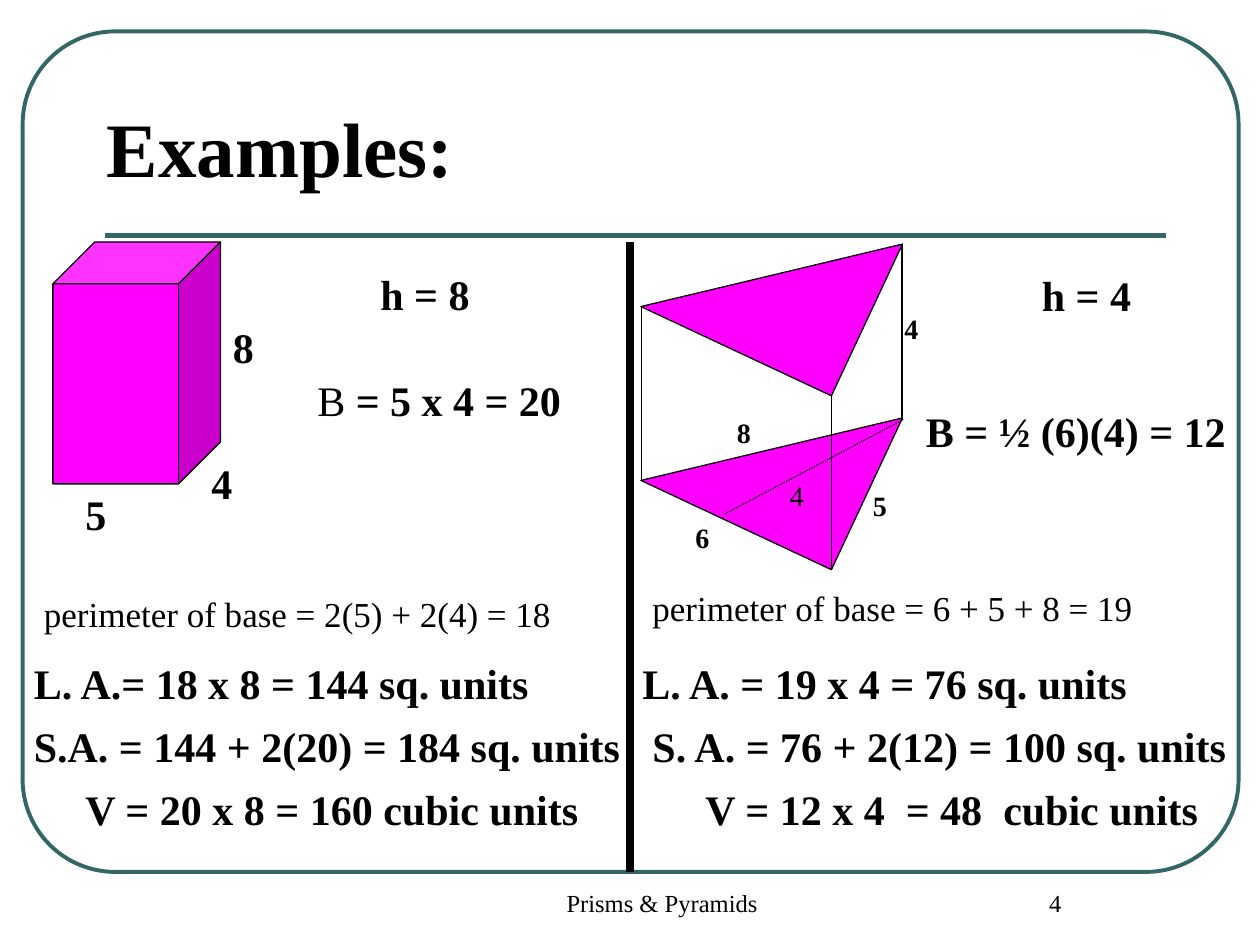
from lxml import etree
from pptx import Presentation
from pptx.dml.color import RGBColor
from pptx.enum.dml import MSO_LINE
from pptx.enum.shapes import MSO_CONNECTOR, MSO_SHAPE as SHAPE
from pptx.enum.text import MSO_ANCHOR as ANCHOR, PP_ALIGN as ALIGN
from pptx.oxml.ns import qn
from pptx.util import Inches, Pt

BLACK = RGBColor(0x00, 0x00, 0x00)
TEAL = RGBColor(0x33, 0x66, 0x66)
MAGENTA = RGBColor(0xFF, 0x00, 0xFF)
FONT = "Times New Roman"

prs = Presentation()
prs.slide_width, prs.slide_height = Inches(10), Inches(7.5)
slide = prs.slides.add_slide(prs.slide_layouts[6])
shapes = slide.shapes


def add_text(text, left, top, width, height=0.5, size=24, bold=True,
             align=ALIGN.LEFT, anchor=ANCHOR.TOP, spacing=1.0, plain_start=""):
    """Place one line of text; plain_start is a lead-in that is never bold."""
    frame = shapes.add_textbox(Inches(left), Inches(top),
                               Inches(width), Inches(height)).text_frame
    frame.word_wrap = True
    frame.vertical_anchor = anchor
    paragraph = frame.paragraphs[0]
    paragraph.alignment = align
    paragraph.line_spacing = spacing
    for words, is_bold in ((plain_start, False), (text, bold)):
        if words:
            run = paragraph.add_run()
            run.text = words
            run.font.name, run.font.size, run.font.bold = FONT, Pt(size), is_bold
            run.font.color.rgb = BLACK


def add_line(start, end, color=BLACK, width=0.75, dash=None):
    line = shapes.add_connector(MSO_CONNECTOR.STRAIGHT,
                                *(Inches(v) for v in (*start, *end)))
    line.line.color.rgb = color
    line.line.width = Pt(width)
    if dash:
        line.line.dash_style = dash
    etree.SubElement(line._element.spPr, qn("a:effectLst"))


# Frame, title and footer
frame_outline = shapes.add_shape(SHAPE.ROUNDED_RECTANGLE, Inches(0.18), Inches(0.25),
                                 Inches(9.65), Inches(6.67))
frame_outline.adjustments[0] = 0.11
frame_outline.shadow.inherit = False
frame_outline.fill.background()
frame_outline.line.color.rgb = TEAL
frame_outline.line.width = Pt(2.25)
add_line((0.83, 1.87), (9.25, 1.87), TEAL, 3)
add_text("Prisms & Pyramids", 3.67, 7, 3.17, size=14, bold=False, align=ALIGN.CENTER)
add_text("4", 7.5, 7, 1.75, size=14, bold=False, align=ALIGN.CENTER)
add_text("Examples:", 0.75, 0.33, 8.42, 1.25, size=44, anchor=ANCHOR.BOTTOM)
add_line((5, 1.92), (5, 6.92), width=4.5)

# Solids: the box, then the two bases of the triangular prism
for kind, left, top, width, height, turn in (
    (SHAPE.CUBE, 0.42, 1.92, 1.33, 1.92, 0),
    (SHAPE.RIGHT_TRIANGLE, 5.46, 2.73, 1.33, 1.67, 295.1),
    (SHAPE.RIGHT_TRIANGLE, 5.46, 1.35, 1.33, 1.67, 295.1),
):
    solid = shapes.add_shape(kind, Inches(left), Inches(top),
                             Inches(width), Inches(height))
    solid.rotation = turn
    solid.shadow.inherit = False
    solid.fill.solid()
    solid.fill.fore_color.rgb = MAGENTA
    solid.line.color.rgb = BLACK
    solid.line.width = Pt(0.75)

# Upright edges of the prism and the dotted height of its base
PRISM_HEIGHT = 1.38
for x, y in ((5.09, 2.44), (6.6, 3.14), (7.16, 1.94)):
    add_line((x, y), (x, y + PRISM_HEIGHT))
add_line((5.75, 4.08), (7.17, 3.33), dash=MSO_LINE.ROUND_DOT)

# Edge lengths
for label, left, top, width in (
    ("5", 0.58, 3.83, 0.67), ("4", 1.58, 3.58, 0.33), ("8", 1.75, 2.5, 0.33),
):
    add_text(label, left, top, width)
for label, left, top, width, bold in (
    ("6", 5.42, 4.08, 0.5, True), ("8", 5.75, 3.25, 0.42, True),
    ("5", 6.83, 3.83, 0.42, True), ("4", 7.08, 2.42, 0.42, True),
    ("4", 6.17, 3.75, 0.33, False),
):
    add_text(label, left, top, width, 0.37, size=16, bold=bold)

# Box calculations
add_text("h = 8", 2.92, 2.08, 1.25)
add_text(" = 5 x 4 = 20", 2.42, 2.92, 2.17, plain_start="B")
add_text("perimeter of base = 2(5) + 2(4) = 18", 0.25, 4.65, 4.33, 0.43,
         size=20, bold=False)
add_text("L. A.= 18 x 8 = 144 sq. units", 0.17, 5.17, 4.42)
add_text("S.A. = 144 + 2(20) = 184 sq. units", 0.17, 5.75, 5, 0.42, spacing=0.8)
add_text("V = 20 x 8 = 160 cubic units", 0.58, 6.17, 4.33)

# Prism calculations
add_text("h = 4", 8.17, 2.17, 1.17, 0.42, spacing=0.8)
add_text("B = ½ (6)(4) = 12", 7.25, 3.25, 2.75, 0.42, spacing=0.8)
add_text("perimeter of base = 6 + 5 + 8 = 19", 5.08, 4.67, 4.5, 0.37,
         size=20, bold=False, spacing=0.8)
add_text("L. A. = 19 x 4 = 76 sq. units", 5, 5.25, 4.25, 0.42, spacing=0.8)
add_text("S. A. = 76 + 2(12) = 100 sq. units", 5.08, 5.75, 4.92, 0.42, spacing=0.8)
add_text("V = 12 x 4  = 48  cubic units", 5.5, 6.17, 4.42)

prs.save("out.pptx")
